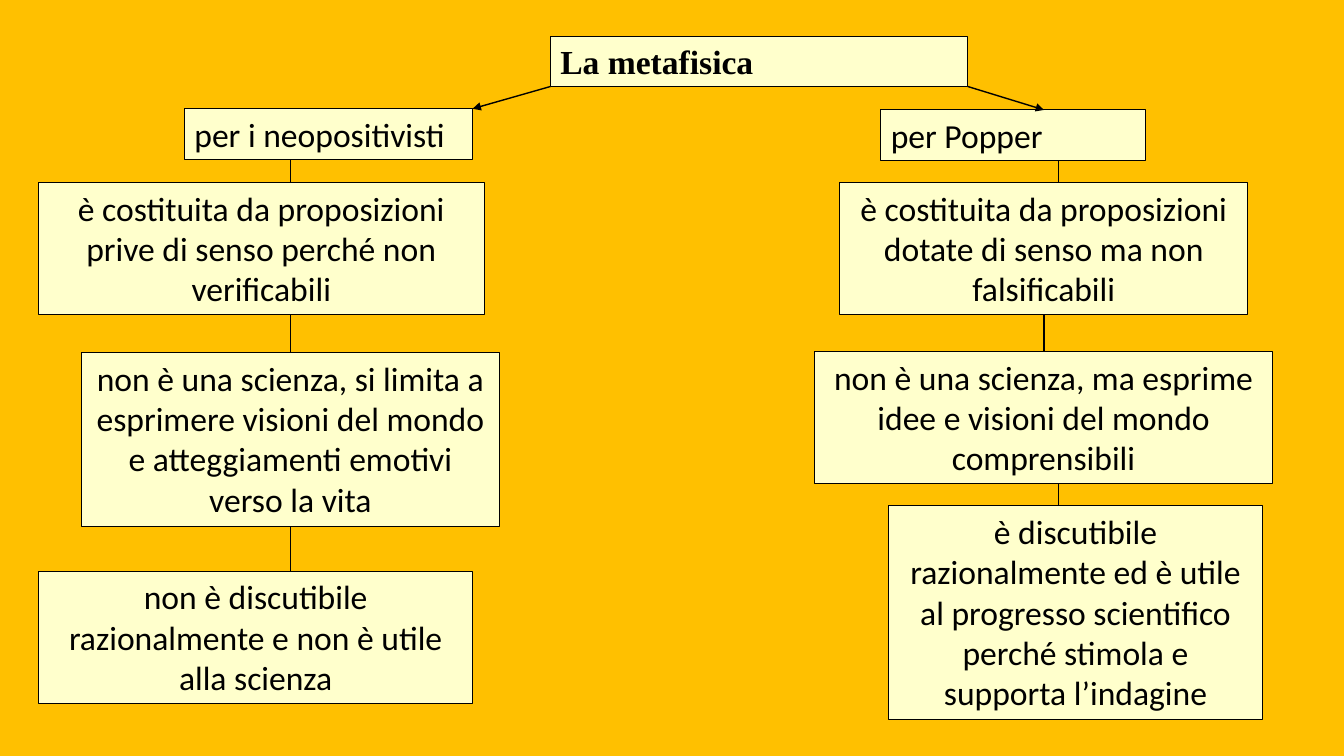
from dataclasses import dataclass
from itertools import pairwise

from lxml.etree import SubElement
from pptx import Presentation
from pptx.dml.color import RGBColor
from pptx.enum.shapes import MSO_CONNECTOR, MSO_SHAPE
from pptx.enum.text import MSO_ANCHOR, MSO_AUTO_SIZE, PP_ALIGN
from pptx.oxml.ns import qn
from pptx.util import Cm, Pt


@dataclass(frozen=True)
class Theme:
    background: RGBColor = RGBColor(0xFF, 0xC0, 0x00)
    box_fill: RGBColor = RGBColor(0xFF, 0xFF, 0xCC)
    ink: RGBColor = RGBColor(0x00, 0x00, 0x00)
    title_font: str = "Times New Roman"
    body_font: str = "Calibri"
    text_size: Pt = Pt(24)
    border: Pt = Pt(0.75)
    link: Pt = Pt(1)


@dataclass(frozen=True)
class Box:
    """A rectangle in centimetres."""
    left: float
    top: float
    width: float
    height: float

    @property
    def right(self):
        return self.left + self.width

    @property
    def bottom(self):
        return self.top + self.height

    def inner(self, dx, dy, width, height):
        return Box(self.left + dx, self.top + dy, width, height)


THEME = Theme()
TITLE_BOX = Box(13.87, 0.91, 10.52, 1.27)
LEFT_COLUMN = Box(0.97, 2.74, 11.61, 14.99)
RIGHT_COLUMN = Box(20.52, 2.77, 11.56, 15.36)

# Each statement: offset and size within its column, then the text.
NEOPOSITIVISTS = [
    (3.68, 0, 7.26, 1.27, "per i neopositivisti"),
    (0, 1.86, 11.23, 3.33,
     "è costituita da proposizioni prive di senso perché non verificabili"),
    (1.09, 6.15, 10.52, 4.37,
     "non è una scienza, si limita a esprimere visioni del mondo "
     "e atteggiamenti emotivi verso la vita"),
    (0, 11.66, 10.95, 3.33,
     "non è discutibile razionalmente e non è utile alla scienza"),
]
POPPER = [
    (1.68, 0, 6.68, 1.27, "per Popper"),
    (0.64, 1.83, 10.29, 3.33,
     "è costituita da proposizioni dotate di senso ma non falsificabili"),
    (0, 6.09, 11.56, 3.33,
     "non è una scienza, ma esprime idee e visioni del mondo comprensibili"),
    (1.86, 9.98, 9.45, 5.38,
     "è discutibile razionalmente ed è utile al progresso scientifico "
     "perché stimola e supporta l’indagine"),
]
LEFT_LINKS = [6.35] * 3
RIGHT_LINKS = [6.15, 5.79, 6.15]


def add_label(slide, box, text, align=PP_ALIGN.LEFT, font=THEME.body_font, bold=False):
    shape = slide.shapes.add_shape(
        MSO_SHAPE.RECTANGLE, Cm(box.left), Cm(box.top), Cm(box.width), Cm(box.height))
    shape.shadow.inherit = False
    shape.fill.solid()
    shape.fill.fore_color.rgb = THEME.box_fill
    shape.line.color.rgb = THEME.ink
    shape.line.width = THEME.border
    frame = shape.text_frame
    frame.text = text
    frame.word_wrap = True
    frame.auto_size = MSO_AUTO_SIZE.SHAPE_TO_FIT_TEXT
    frame.vertical_anchor = MSO_ANCHOR.TOP
    paragraph = frame.paragraphs[0]
    paragraph.alignment = align
    run_font = paragraph.runs[0].font
    run_font.name = font
    run_font.size = THEME.text_size
    run_font.bold = bold
    run_font.color.rgb = THEME.ink


def add_link(slide, start, end, arrow=False):
    connector = slide.shapes.add_connector(
        MSO_CONNECTOR.STRAIGHT, *(Cm(value) for value in (*start, *end)))
    connector.line.color.rgb = THEME.ink
    connector.line.width = THEME.link
    if arrow:
        SubElement(connector.line._get_or_add_ln(), qn("a:tailEnd"), type="triangle")
    SubElement(connector._element.spPr, qn("a:effectLst"))


def add_column(slide, column, statements, link_offsets):
    """Stack a heading and its statements, joined by vertical lines."""
    boxes = [column.inner(*place) for *place, _ in statements]
    for index, (box, statement) in enumerate(zip(boxes, statements)):
        align = PP_ALIGN.CENTER if index else PP_ALIGN.LEFT
        add_label(slide, box, statement[-1], align)
    for (upper, lower), offset in zip(pairwise(boxes), link_offsets):
        x = column.left + offset
        add_link(slide, (x, upper.bottom), (x, lower.top))
    return boxes[0]


def add_title(slide, box):
    add_label(slide, box, "La metafisica", font=THEME.title_font, bold=True)


def build_concept_map(slide):
    slide.background.fill.solid()
    slide.background.fill.fore_color.rgb = THEME.background
    add_title(slide, TITLE_BOX)
    left_heading = add_column(slide, LEFT_COLUMN, NEOPOSITIVISTS, LEFT_LINKS)
    right_heading = add_column(slide, RIGHT_COLUMN, POPPER, RIGHT_LINKS)
    add_link(slide, (TITLE_BOX.left, TITLE_BOX.bottom),
             (left_heading.right, left_heading.top), arrow=True)
    add_link(slide, (TITLE_BOX.right, TITLE_BOX.bottom),
             (RIGHT_COLUMN.left + RIGHT_LINKS[1], right_heading.top), arrow=True)


def main():
    presentation = Presentation()
    presentation.slide_width = Cm(33.87)
    presentation.slide_height = Cm(19.05)
    build_concept_map(presentation.slides.add_slide(presentation.slide_layouts[6]))
    presentation.save("out.pptx")


if __name__ == "__main__":
    main()
